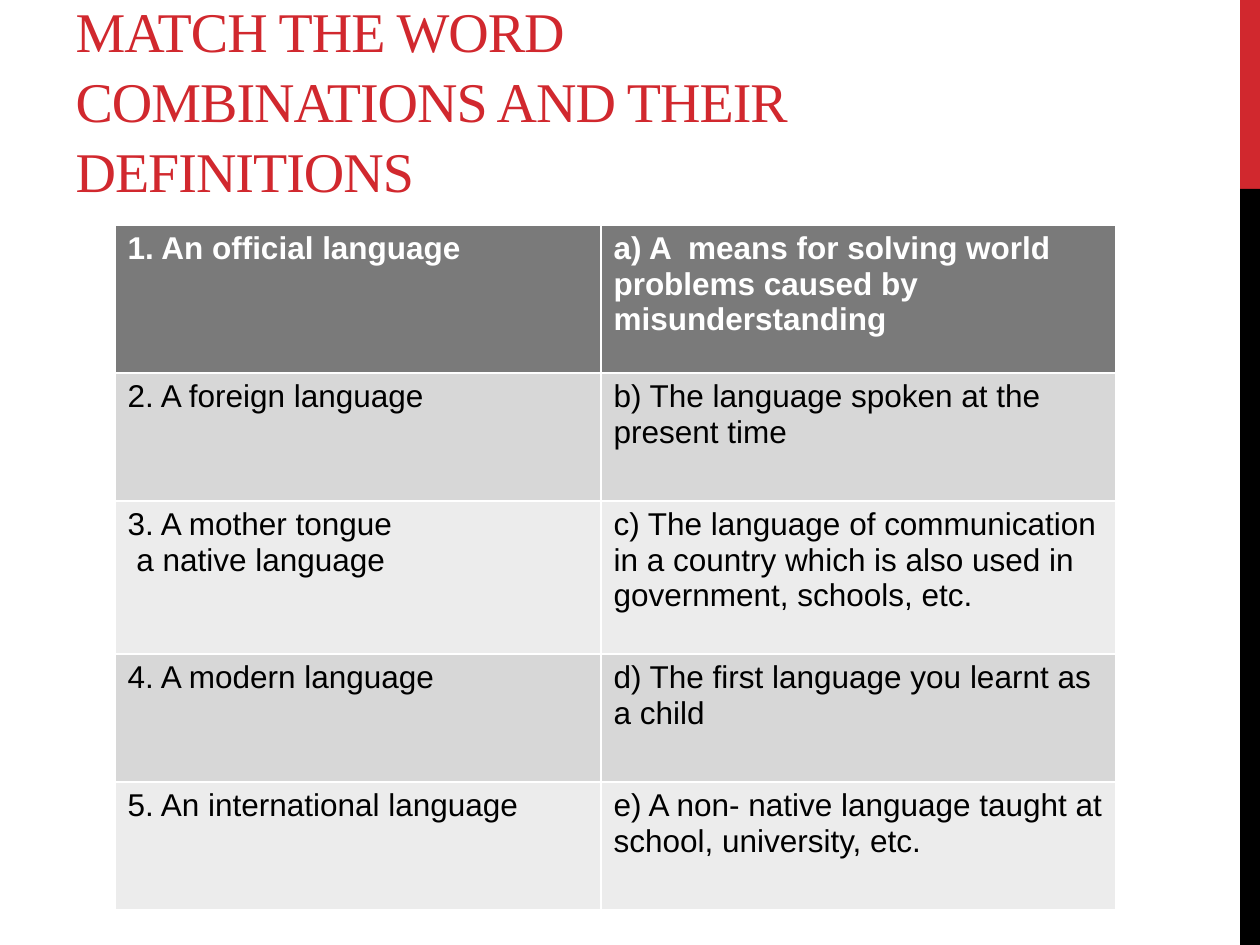
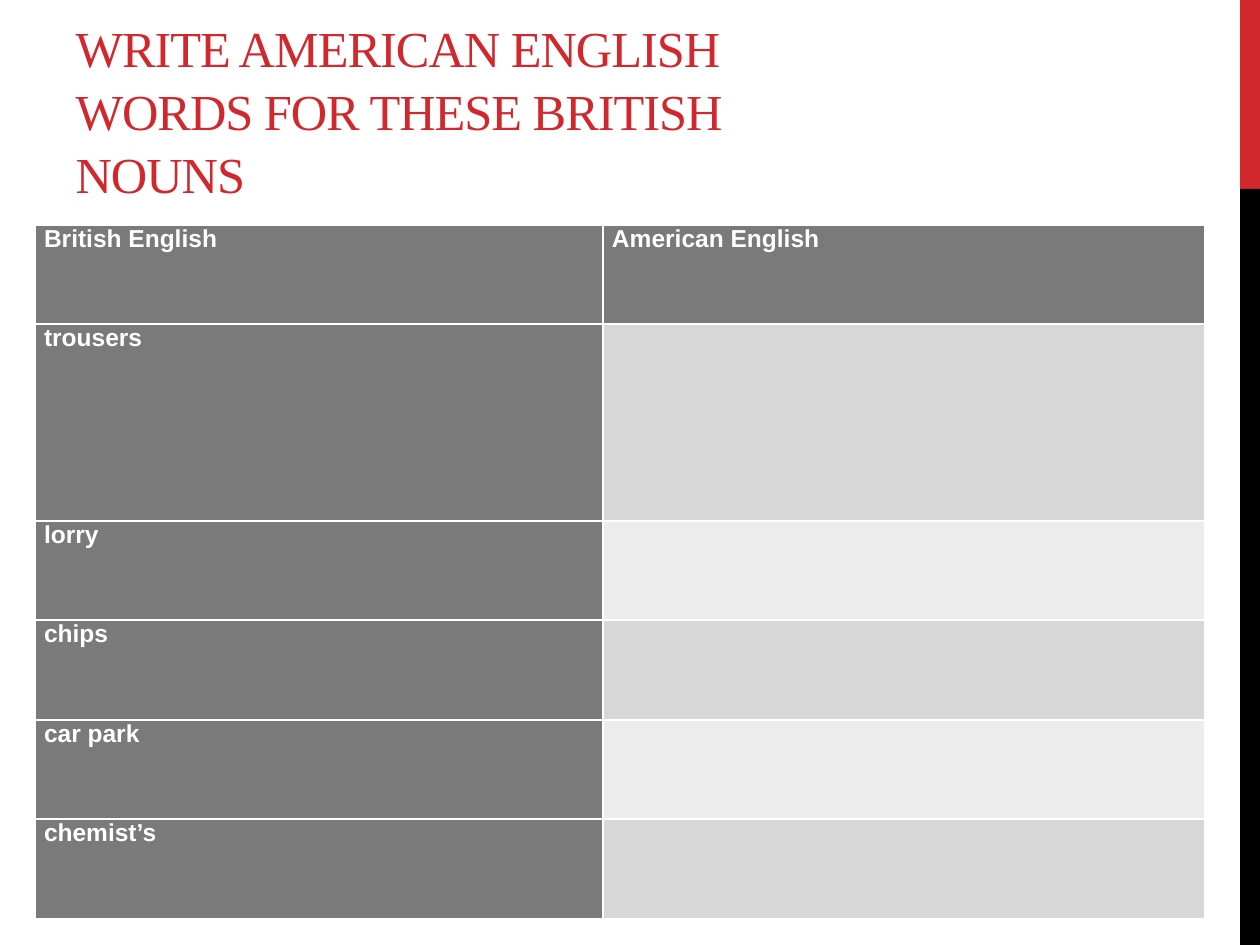
from pptx import Presentation
from pptx.dml.color import RGBColor
from pptx.enum.shapes import MSO_SHAPE
from pptx.enum.text import MSO_ANCHOR, MSO_AUTO_SIZE, PP_ALIGN
from pptx.oxml.ns import qn
from pptx.util import Emu, Pt

RED = RGBColor(0xD1, 0x28, 0x2E)
BLACK = RGBColor(0, 0, 0)
WHITE = RGBColor(255, 255, 255)
HEAD = RGBColor(0x7A, 0x7A, 0x7A)
BANDS = [RGBColor(0xEC, 0xEC, 0xEC), RGBColor(0xD7, 0xD7, 0xD7)]
SERIF = "Times New Roman"
SANS = "Arial"
WIDE, HIGH = 1260, 945
SIDE = (1240, 0, 20, HIGH)
TITLE = (63, 21, 798, 189)

MATCH = [
    ("1. An official language",
     "a) A  means for solving world problems caused by misunderstanding"),
    ("2. A foreign language", "b) The language spoken at the present time"),
    ("3. A mother tongue\n a native language",
     "c) The language of communication in a country which is also used in "
     "government, schools, etc."),
    ("4. A modern language", "d) The first language you learnt as a child"),
    ("5. An international language",
     "e) A non- native language taught at school, university, etc."),
]
NOUNS = [("British English", "American English")] + [
    (noun, "") for noun in ("trousers", "lorry", "chips", "car park", "chemist’s")
]


def px(length):
    """Turn pixels into EMU."""
    return Emu(round(length * 914400 / 126))


def style(para, face, size, color, bold=False):
    """Set the font of a paragraph."""
    font = para.font
    font.name, font.size, font.bold = face, Pt(size), bold
    font.color.rgb = color


def add_side(slide, box):
    """Draw the red and black band down the side."""
    left, top, width, height = box
    cut = height // 5
    for color, start, tall in ((RED, 0, cut), (BLACK, cut, height - cut)):
        band = slide.shapes.add_shape(
            MSO_SHAPE.RECTANGLE, px(left), px(top + start), px(width), px(tall))
        band.shadow.inherit = False
        band.fill.solid()
        band.fill.fore_color.rgb = color
        band.line.fill.background()


def set_title(slide, box, text, size):
    """Place and format the title."""
    title = slide.shapes.title
    title.left, title.top, title.width, title.height = map(px, box)
    frame = title.text_frame
    frame.text = text
    frame.word_wrap = True
    frame.auto_size = MSO_AUTO_SIZE.NONE
    frame.vertical_anchor = MSO_ANCHOR.BOTTOM
    para = frame.paragraphs[0]
    para.alignment = PP_ALIGN.LEFT
    para.line_spacing = 1.04
    style(para, SERIF, size, RED)
    para._p.pPr.find(qn("a:defRPr")).set("spc", "-60")


def add_grid(slide, box, rows, cols, talls, size, inset=None, key=False):
    """Draw a two-column table, with key for a dark first column."""
    grid = slide.shapes.add_table(len(rows), len(cols), *map(px, box)).table
    grid.horz_banding = False
    for col, width in zip(grid.columns, cols):
        col.width = px(width)
    for r, (texts, tall) in enumerate(zip(rows, talls)):
        grid.rows[r].height = px(tall)
        for c, text in enumerate(texts):
            cell = grid.cell(r, c)
            dark = r == 0 or (key and c == 0)
            cell.fill.solid()
            cell.fill.fore_color.rgb = HEAD if dark else BANDS[r % 2]
            if inset:
                cell.margin_left = cell.margin_right = px(inset)
                cell.margin_top = cell.margin_bottom = 0
            cell.text = text
            for para in cell.text_frame.paragraphs:
                style(para, SANS, size, WHITE if dark else BLACK, dark)


def add_page(deck, title, size):
    """Add a slide with its side band and title."""
    slide = deck.slides.add_slide(deck.slide_layouts[5])
    add_side(slide, SIDE)
    set_title(slide, TITLE, title, size)
    return slide


def main():
    """Build and save the deck."""
    deck = Presentation()
    deck.slide_width, deck.slide_height = px(WIDE), px(HIGH)
    page = add_page(deck, "MATCH THE WORD COMBINATIONS AND THEIR DEFINITIONS", 32)
    add_grid(page, (115, 225, 1001, 685), MATCH, (486, 515),
             (148, 128, 153, 128, 128), 18)
    page = add_page(deck, "WRITE AMERICAN ENGLISH WORDS FOR THESE BRITISH NOUNS", 28.8)
    add_grid(page, (35, 225, 1170, 694), NOUNS, (568, 602),
             (99, 197, 99, 100, 99, 100), 14, inset=9, key=True)
    deck.save("out.pptx")


if __name__ == "__main__":
    main()
